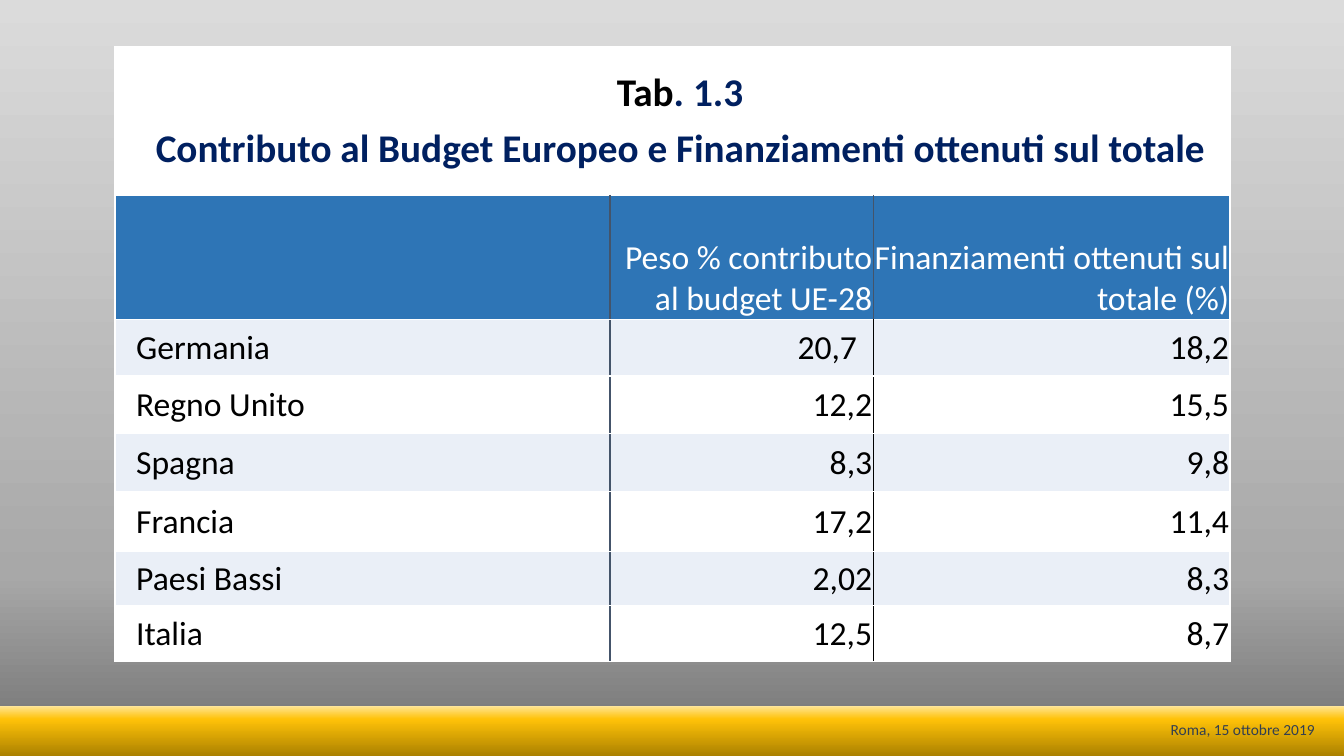
from dataclasses import dataclass

from lxml import etree
from pptx import Presentation
from pptx.dml.color import RGBColor
from pptx.enum.shapes import MSO_SHAPE
from pptx.enum.text import MSO_ANCHOR, PP_ALIGN
from pptx.oxml.ns import qn
from pptx.util import Inches, Pt

RECTANGLE = MSO_SHAPE.RECTANGLE
MIDDLE, BOTTOM = MSO_ANCHOR.MIDDLE, MSO_ANCHOR.BOTTOM
LEFT, CENTER, RIGHT = PP_ALIGN.LEFT, PP_ALIGN.CENTER, PP_ALIGN.RIGHT


@dataclass(frozen=True)
class Theme:
    font: str = "Calibri"
    title_size: int = 28
    table_size: int = 24
    date_size: int = 11
    black: str = "000000"
    white: str = "FFFFFF"
    navy: str = "002060"
    slate: str = "44546A"
    date: str = "333F50"
    header: str = "2E75B6"
    band: str = "EAEFF7"
    backdrop: tuple = ((0, "6F6F6F"), (24, "A8A8A8"), (100, "DBDBDB"))
    gold: tuple = ((0, "AB8100"), (73, "FFC208"), (100, "FFE699"))


THEME = Theme()

TITLE = [
    [("Tab", THEME.black), (". 1.3", THEME.navy)],
    [("Contributo al Budget Europeo e Finanziamenti ottenuti sul totale", THEME.navy)],
]
HEADINGS = ["", "Peso % contributo al budget UE-28", "Finanziamenti ottenuti sul totale (%)"]
COUNTRIES = [
    ("Germania", "20,7", "18,2"),
    ("Regno Unito", "12,2", "15,5"),
    ("Spagna", "8,3", "9,8"),
    ("Francia", "17,2", "11,4"),
    ("Paesi Bassi", "2,02", "8,3"),
    ("Italia", "12,5", "8,7"),
]
DATE = "Roma, 15 ottobre 2019"

TABLE_BOX = (1.14, 0.46, 11.06, 6.1)
COLUMN_WIDTHS = [4.91, 2.61, 3.54]
ROW_HEIGHTS = [1.48, 1.23, 0.56, 0.57, 0.58, 0.59, 0.54, 0.55]
EDGE = 0.01
LABEL_INSET = 0.21
TITLE_INSET = 0.16
SHIFTED_VALUE = (2, 1)
SHIFT = 0.16


def inches(values):
    return [Inches(value) for value in values]


def apply_gradient(fill, element, stops):
    fill.gradient()
    fill.gradient_angle = 90
    stop_list = next(element.iter(qn("a:gsLst")))
    for stop in list(stop_list):
        stop_list.remove(stop)
    for position, color in stops:
        stop = etree.SubElement(stop_list, qn("a:gs"), pos=str(position * 1000))
        etree.SubElement(stop, qn("a:srgbClr"), val=color)


def add_span(para, text, size, color, bold=False):
    span = para.add_run()
    span.text = text
    span.font.name = THEME.font
    span.font.size = Pt(size)
    span.font.bold = bold
    span.font.color.rgb = RGBColor.from_string(color)


def format_cell(cell, fill, anchor, left_line, right_line, left=EDGE, right=EDGE):
    properties = cell._tc.get_or_add_tcPr()
    sides = {"L": left_line, "R": right_line, "T": THEME.white, "B": THEME.white}
    for side, color in sides.items():
        line = etree.SubElement(properties, qn(f"a:ln{side}"), w=str(Pt(1)))
        solid = etree.SubElement(line, qn("a:solidFill"))
        etree.SubElement(solid, qn("a:srgbClr"), val=color)
    cell.fill.solid()
    cell.fill.fore_color.rgb = RGBColor.from_string(fill)
    cell.vertical_anchor = anchor
    cell.margin_left, cell.margin_right = Inches(left), Inches(right)
    cell.margin_top, cell.margin_bottom = Inches(EDGE), Inches(0)


def fill_title(table):
    title_cell = table.cell(0, 0)
    title_cell.merge(table.cell(0, 2))
    for column in range(3):
        format_cell(table.cell(0, column), THEME.white, MIDDLE,
                    THEME.white, THEME.white, left=TITLE_INSET)
    frame = title_cell.text_frame
    for index, spans in enumerate(TITLE):
        para = frame.add_paragraph() if index else frame.paragraphs[0]
        para.alignment = CENTER
        para.space_after = Pt(0 if index else 6)
        for text, color in spans:
            add_span(para, text, THEME.title_size, color, bold=True)


def fill_rows(table):
    for row, texts in enumerate([HEADINGS, *COUNTRIES], start=1):
        heading = row == 1
        divider = THEME.slate if heading else THEME.black
        lines = [THEME.white, THEME.slate, divider, THEME.white]
        fill = THEME.header if heading else (THEME.white if row % 2 else THEME.band)
        for column, text in enumerate(texts):
            cell = table.cell(row, column)
            format_cell(cell, fill, BOTTOM if heading else MIDDLE,
                        lines[column], lines[column + 1],
                        left=EDGE if column else LABEL_INSET,
                        right=SHIFT if (row, column) == SHIFTED_VALUE else EDGE)
            para = cell.text_frame.paragraphs[0]
            para.alignment = RIGHT if column else LEFT
            if text:
                add_span(para, text, THEME.table_size,
                         THEME.white if heading else THEME.black)


def add_table(page):
    table = page.shapes.add_table(
        len(ROW_HEIGHTS), len(COLUMN_WIDTHS), *inches(TABLE_BOX)).table
    table.first_row = False
    table.horz_banding = False
    for column, width in zip(table.columns, COLUMN_WIDTHS):
        column.width = Inches(width)
    for row, height in zip(table.rows, ROW_HEIGHTS):
        row.height = Inches(height)
    fill_title(table)
    fill_rows(table)


def add_footer(page):
    bar = page.shapes.add_shape(RECTANGLE, *inches((0, 7, 13.33, 0.5)))
    bar.shadow.inherit = False
    bar.line.fill.background()
    apply_gradient(bar.fill, bar._element, THEME.gold)
    box = page.shapes.add_textbox(*inches((10.44, 7.09, 2.7, 0.29)))
    box.text_frame.word_wrap = True
    para = box.text_frame.paragraphs[0]
    para.alignment = RIGHT
    add_span(para, DATE, THEME.date_size, THEME.date)


def main():
    deck = Presentation()
    deck.slide_width, deck.slide_height = Inches(13.33), Inches(7.5)
    page = deck.slides.add_slide(deck.slide_layouts[6])
    apply_gradient(page.background.fill, page._element, THEME.backdrop)
    add_footer(page)
    add_table(page)
    deck.save("out.pptx")


if __name__ == "__main__":
    main()
